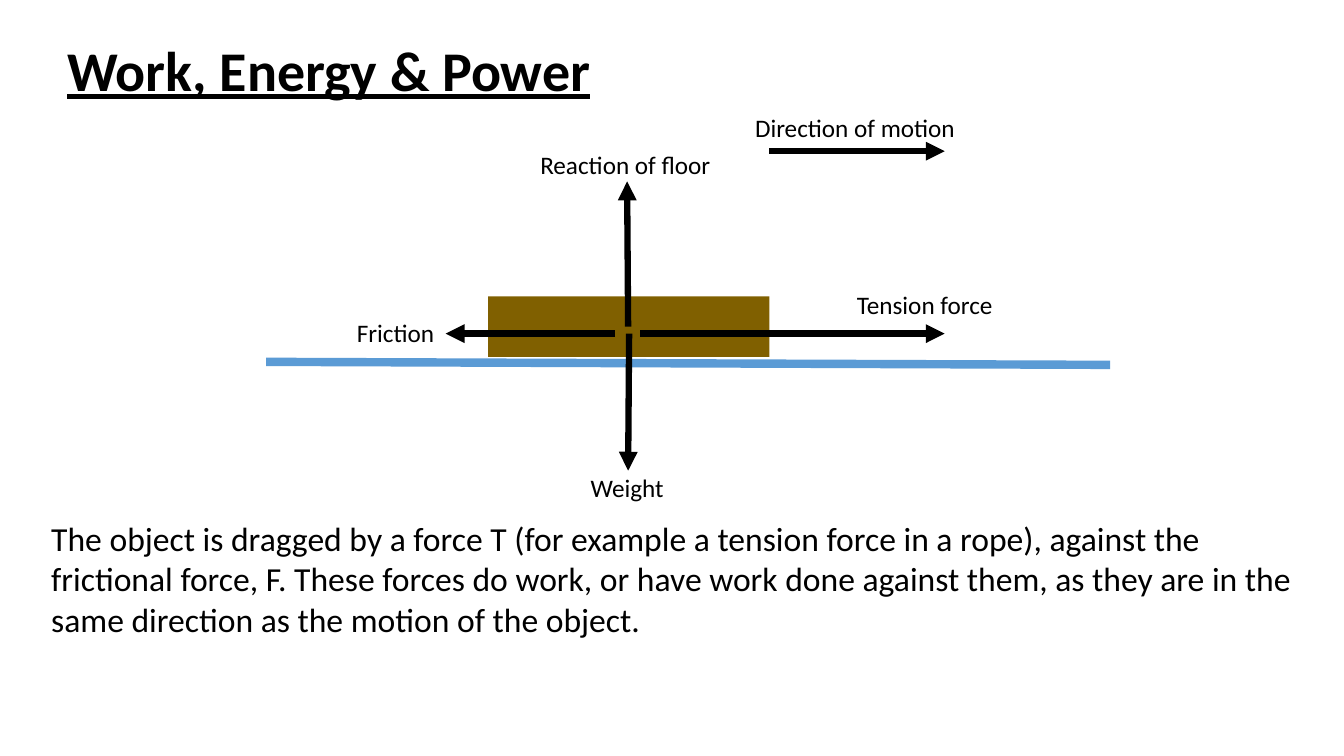
import pptx
import pptx.dml.color
import pptx.enum.shapes
import pptx.enum.text
import pptx.oxml.ns
import pptx.util
from lxml import etree
from pptx.util import Inches

BLACK = "000000"
FLOOR_BLUE = "5B9BD5"
BLOCK_BROWN = "806000"

LABELS = [
    ("Direction of motion", 7.39, 1.07, 2.21),
    ("Weight", 5.76, 4.64, 0.94),
    ("Reaction of floor", 5.26, 1.43, 1.91),
    ("Tension force", 8.4, 2.82, 1.56),
    ("Friction", 3.44, 3.1, 0.98),
]
ARROWS = [
    ((6.23, 3.24), (6.22, 1.8)),
    ((6.24, 3.31), (6.23, 4.67)),
    ((6.35, 3.31), (9.37, 3.31)),
    ((6.1, 3.31), (4.42, 3.31)),
    ((7.63, 1.5), (9.37, 1.5)),
]
EXPLANATION = (
    "The object is dragged by a force T (for example a tension force in a rope), "
    "against the frictional force, F. These forces do work, or have work done "
    "against them, as they are in the same direction as the motion of the object."
)


def color(value):
    return pptx.dml.color.RGBColor.from_string(value)


def add_text(slide, text, left, top, width, height, size, wrap=False, heading=False):
    box = slide.shapes.add_textbox(
        Inches(left), Inches(top), Inches(width), Inches(height)
    )
    frame = box.text_frame
    frame.word_wrap = wrap
    frame.auto_size = pptx.enum.text.MSO_AUTO_SIZE.SHAPE_TO_FIT_TEXT
    paragraph = frame.paragraphs[0]
    paragraph.text = text
    font = paragraph.font
    font.name = "Calibri"
    font.size = pptx.util.Pt(size)
    font.color.rgb = color(BLACK)
    font.bold = heading
    font.underline = heading


def add_line(slide, start, end, line_color, width, arrow=False):
    connector = slide.shapes.add_connector(
        pptx.enum.shapes.MSO_CONNECTOR.STRAIGHT,
        *(Inches(value) for value in start + end),
    )
    connector.line.color.rgb = color(line_color)
    connector.line.width = pptx.util.Pt(width)
    properties = connector._element.spPr
    if arrow:
        outline = properties.find(pptx.oxml.ns.qn("a:ln"))
        etree.SubElement(outline, pptx.oxml.ns.qn("a:tailEnd"), type="triangle")
    etree.SubElement(properties, pptx.oxml.ns.qn("a:effectLst"))


def add_block(slide, left, top, width, height, fill):
    block = slide.shapes.add_shape(
        pptx.enum.shapes.MSO_SHAPE.RECTANGLE,
        Inches(left), Inches(top), Inches(width), Inches(height),
    )
    block.shadow.inherit = False
    block.fill.solid()
    block.fill.fore_color.rgb = color(fill)
    block.line.fill.background()


def main():
    presentation = pptx.Presentation()
    presentation.slide_width = Inches(13.33)
    presentation.slide_height = Inches(7.5)
    slide = presentation.slides.add_slide(presentation.slide_layouts[6])

    add_text(slide, "Work, Energy & Power", 0.57, 0.3, 5.45, 0.77, 40, heading=True)
    add_line(slide, (2.64, 3.59), (11.01, 3.62), FLOOR_BLUE, 6)
    add_block(slide, 4.84, 2.94, 2.79, 0.6, BLOCK_BROWN)
    for start, end in ARROWS:
        add_line(slide, start, end, BLACK, 4.5, arrow=True)
    for text, left, top, width in LABELS:
        add_text(slide, text, left, top, width, 0.4, 18)
    add_text(slide, EXPLANATION, 0.41, 5.09, 12.7, 1.31, 24, wrap=True)

    presentation.save("out.pptx")


if __name__ == "__main__":
    main()
